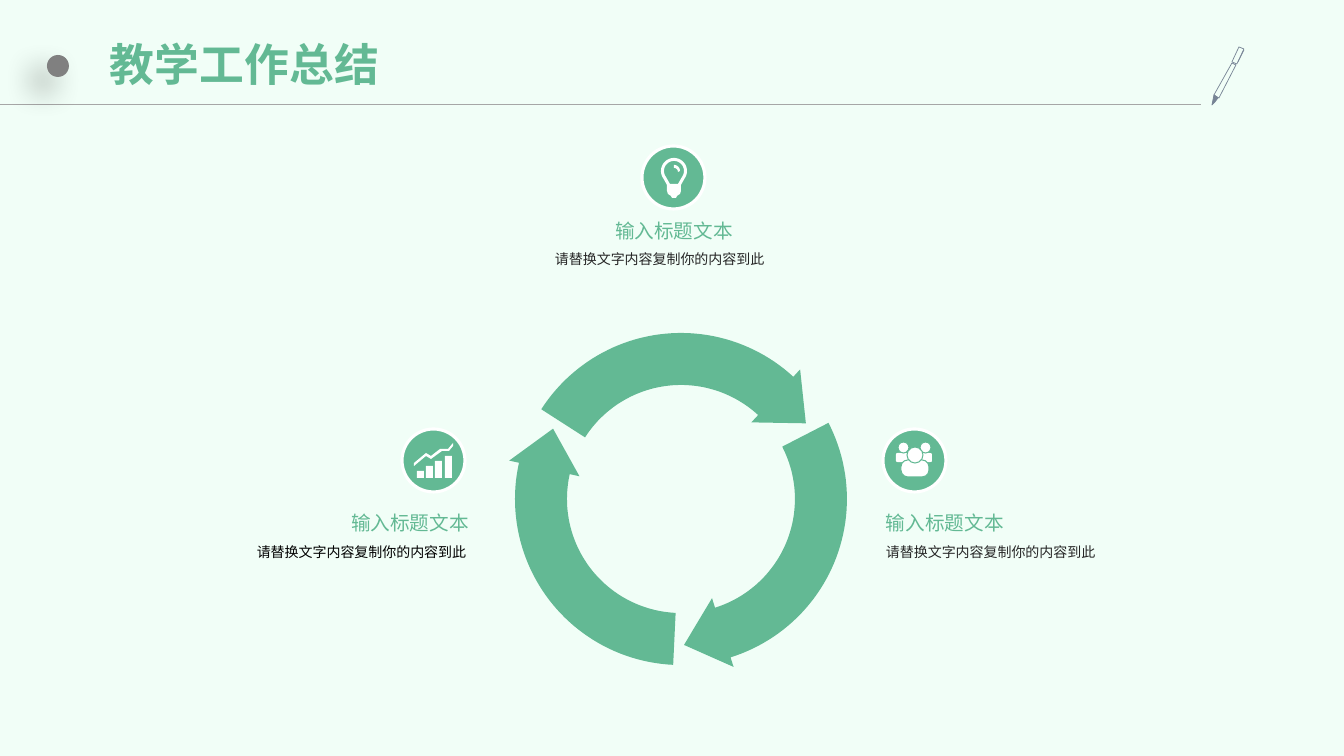
from math import cos, radians, sin

from lxml.etree import SubElement
from pptx import Presentation
from pptx.dml.color import RGBColor
from pptx.enum.shapes import MSO_CONNECTOR, MSO_SHAPE
from pptx.enum.text import MSO_ANCHOR, MSO_AUTO_SIZE, PP_ALIGN
from pptx.oxml import parse_xml
from pptx.oxml.ns import nsdecls, qn
from pptx.util import Emu, Pt

GREEN = RGBColor(0x63, 0xB9, 0x94)
MINT = RGBColor(0xF1, 0xFE, 0xF7)
WHITE = RGBColor(0xFF, 0xFF, 0xFF)
BLACK = RGBColor(0, 0, 0)
INK = RGBColor(0x26, 0x26, 0x26)
RULE_GRAY = RGBColor(0xA6, 0xA6, 0xA6)
DOT_GRAY = RGBColor(0x80, 0x80, 0x80)
PEN_GRAY = RGBColor(0x77, 0x84, 0x95)
CJK = "Noto Sans CJK SC"
HEADING = "输入标题文本"
DETAIL = "请替换文字内容复制你的内容到此"
SCALE = 914400 / 100.8


def px(length):
    """Turn px into EMU."""
    return Emu(round(length * SCALE))


def paint(shape, fill, line=None, width=0):
    """Set the fill and line of a shape and drop its shadow."""
    shape.shadow.inherit = False
    if fill is None:
        shape.fill.background()
    else:
        shape.fill.solid()
        shape.fill.fore_color.rgb = fill
    if line is None:
        shape.line.fill.background()
    else:
        shape.line.color.rgb = line
        shape.line.width = Pt(width)
    return shape


def preset(slide, kind, box, fill, line=None, width=0):
    """Add a preset shape in a px box."""
    return paint(slide.shapes.add_shape(kind, *map(px, box)), fill, line, width)


def outline(slide, contours, fill, line=None, width=0):
    """Add a closed freeform made of one or more px contours."""
    paths = [[(px(x), px(y)) for x, y in contour] for contour in contours]
    builder = slide.shapes.build_freeform(*paths[0][0], scale=1.0)
    builder.add_line_segments(paths[0][1:], close=True)
    for path in paths[1:]:
        builder.move_to(*path[0])
        builder.add_line_segments(path[1:], close=True)
    return paint(builder.convert_to_shape(), fill, line, width)


def straight(slide, start, end, color, width):
    """Add a plain line between two px points."""
    line = slide.shapes.add_connector(
        MSO_CONNECTOR.STRAIGHT, *map(px, start + end))
    line.line.color.rgb = color
    line.line.width = Pt(width)
    SubElement(line._element.spPr, qn("a:effectLst"))


def polar(center, radius, angle):
    """Return the point at a clockwise angle in degrees."""
    turn = radians(angle)
    return center[0] + radius * cos(turn), center[1] + radius * sin(turn)


def arc(center, radius, start, end, steps=48):
    """Return points along an arc."""
    return [polar(center, radius, start + (end - start) * step / steps)
            for step in range(steps + 1)]


def write(frame, text, size, color, font, bold=False, spacing=1.0,
          align=PP_ALIGN.LEFT, anchor=MSO_ANCHOR.TOP, inset=(0, 0)):
    """Put one formatted run into a text frame."""
    frame.word_wrap = True
    frame.auto_size = MSO_AUTO_SIZE.NONE
    frame.vertical_anchor = anchor
    frame.margin_left = frame.margin_right = px(inset[0])
    frame.margin_top = frame.margin_bottom = px(inset[1])
    paragraph = frame.paragraphs[0]
    paragraph.alignment = align
    paragraph.line_spacing = spacing
    run = paragraph.add_run()
    run.text = text
    run.font.name = font
    run.font.size = Pt(size)
    run.font.bold = bold
    run.font.color.rgb = color
    SubElement(run._r.get_or_add_rPr(), qn("a:ea"), typeface=CJK)


def label(slide, box, text, size, color, **options):
    """Add a text box."""
    frame = slide.shapes.add_textbox(*map(px, box)).text_frame
    write(frame, text, size, color, "Arial", **options)


def header(slide, left, top, width, height):
    """Place the title, dot, rule and pen in the header band."""
    title = slide.shapes.title
    title.left, title.top = px(left + 103), px(top + 19)
    title.width, title.height = px(width - 244), px(95)
    write(title.text_frame, "教学工作总结", 32, GREEN, CJK, bold=True,
          spacing=0.9, anchor=MSO_ANCHOR.MIDDLE, inset=(7, 4))
    base = top + height
    straight(slide, (left, base), (left + 1201, base), RULE_GRAY, 0.75)
    dot = preset(slide, MSO_SHAPE.OVAL, (left + 47, top + 55, 22, 22), DOT_GRAY)
    properties = dot._element.spPr
    properties.remove(properties.find(qn("a:effectLst")))
    properties.append(parse_xml(
        f'<a:effectLst {nsdecls("a")}><a:outerShdw blurRad="{Pt(22)}" '
        f'dist="{Pt(15)}" dir="8100000" algn="tr" rotWithShape="0">'
        '<a:srgbClr val="000000"><a:alpha val="40000"/></a:srgbClr>'
        '</a:outerShdw></a:effectLst>'))
    pen(slide, left + 1212, top + 46)


def pen(slide, left, top):
    """Draw the pen with its cap, barrel, nib and clip."""
    cap = [(27, 1), (32, 3), (25, 18), (20, 16)]
    barrel = [(20, 17), (24, 19), (7, 52), (2, 49)]
    nib = [(2, 49), (6, 52), (3, 56), (0, 59)]
    for part, fill in ((cap, None), (barrel, None), (nib, PEN_GRAY)):
        points = [(left + x, top + y) for x, y in part]
        outline(slide, [points], fill, PEN_GRAY, 0.5)
    straight(slide, (left + 32, top + 4), (left + 26, top + 16), PEN_GRAY, 0.5)


def cycle(slide, left, top, size):
    """Draw three arrows chasing each other round a ring."""
    center = (left + size / 2, top + size / 2)
    outer, inner = size / 2, size / 2 - 52
    for turn in (0, 120, 240):
        tail, neck, tip = turn - 147.3, turn - 47.4, turn - 31.2
        head = [polar(center, outer + 10, neck),
                polar(center, outer - 20, tip),
                polar(center, inner - 10, neck)]
        outline(slide, [arc(center, outer, tail, neck) + head
                        + arc(center, inner, neck, tail)], GREEN)


def badge(slide, left, top):
    """Draw the round badge behind an icon."""
    preset(slide, MSO_SHAPE.OVAL, (left, top, 63, 63), GREEN, WHITE, 2.25)


def idea(slide, left, top):
    """Place the light bulb topic."""
    badge(slide, left, top)
    x, y = left + 32, top + 25
    glass = arc((x, y), 13, 145, 395)
    socket = [(7, 14), (7, 20), (6, 23), (3, 25), (2, 27),
              (-2, 27), (-3, 25), (-6, 23), (-7, 20), (-7, 14)]
    hollow = arc((x, y), 10, 145, 395) + [(x + 4, y + 13), (x - 4, y + 13)]
    glint = arc((x, y), 6, -90, 0, 12) + arc((x, y + 1), 4, 0, -90, 12)
    outline(slide, [glass + [(x + dx, y + dy) for dx, dy in socket],
                    hollow, glint], WHITE)
    label(slide, (x - 128, top + 56, 256, 40), HEADING, 14, GREEN,
          align=PP_ALIGN.CENTER, anchor=MSO_ANCHOR.BOTTOM)
    label(slide, (left - 97, top + 96, 258, 66), DETAIL, 10, INK,
          spacing=1.2, inset=(10, 5))


def team(slide, left, top):
    """Place the group of people topic."""
    badge(slide, left, top)
    for head, shoulder in ((15, 13), (37, 37)):
        preset(slide, MSO_SHAPE.ROUNDED_RECTANGLE,
               (left + shoulder, top + 24, 12, 9), WHITE)
        preset(slide, MSO_SHAPE.OVAL, (left + head, top + 13, 11, 11),
               WHITE, GREEN, 0.75)
    torso = preset(slide, MSO_SHAPE.ROUNDED_RECTANGLE,
                   (left + 18, top + 31, 28, 17), WHITE, GREEN, 0.75)
    torso.adjustments[0] = 0.4
    preset(slide, MSO_SHAPE.OVAL, (left + 24, top + 18, 16, 16),
           WHITE, GREEN, 0.75)
    label(slide, (left + 3, top + 77, 254, 34), HEADING, 14, GREEN,
          anchor=MSO_ANCHOR.MIDDLE)
    label(slide, (left + 3, top + 111, 254, 61), DETAIL, 10, INK, spacing=1.2)


def growth(slide, left, top):
    """Place the rising bars topic."""
    badge(slide, left, top)
    for step in range(4):
        rise = 7 + 5 * step
        preset(slide, MSO_SHAPE.RECTANGLE,
               (left + 15 + step * 28 // 3, top + 49 - rise, 7, rise), WHITE)
    trend = [(46, 20), (38, 20), (29, 27), (24, 24), (12, 34), (12, 37),
             (24, 27), (29, 30), (40, 22), (47, 22), (51, 17), (51, 14)]
    outline(slide, [[(left + x, top + y) for x, y in trend]], WHITE)
    label(slide, (left - 191, top + 77, 258, 34), HEADING, 14, GREEN,
          align=PP_ALIGN.RIGHT, anchor=MSO_ANCHOR.MIDDLE)
    label(slide, (left - 191, top + 111, 255, 61), DETAIL, 10, BLACK,
          spacing=1.2, align=PP_ALIGN.RIGHT)


def main():
    """Build and save the slide."""
    deck = Presentation()
    deck.slide_width, deck.slide_height = px(1344), px(756)
    slide = deck.slides.add_slide(deck.slide_layouts[5])
    slide.background.fill.solid()
    slide.background.fill.fore_color.rgb = MINT
    header(slide, 0, 0, 1344, 105)
    cycle(slide, 515, 333, 332)
    idea(slide, 642, 146)
    team(slide, 883, 429)
    growth(slide, 402, 429)
    deck.save("out.pptx")


if __name__ == "__main__":
    main()
